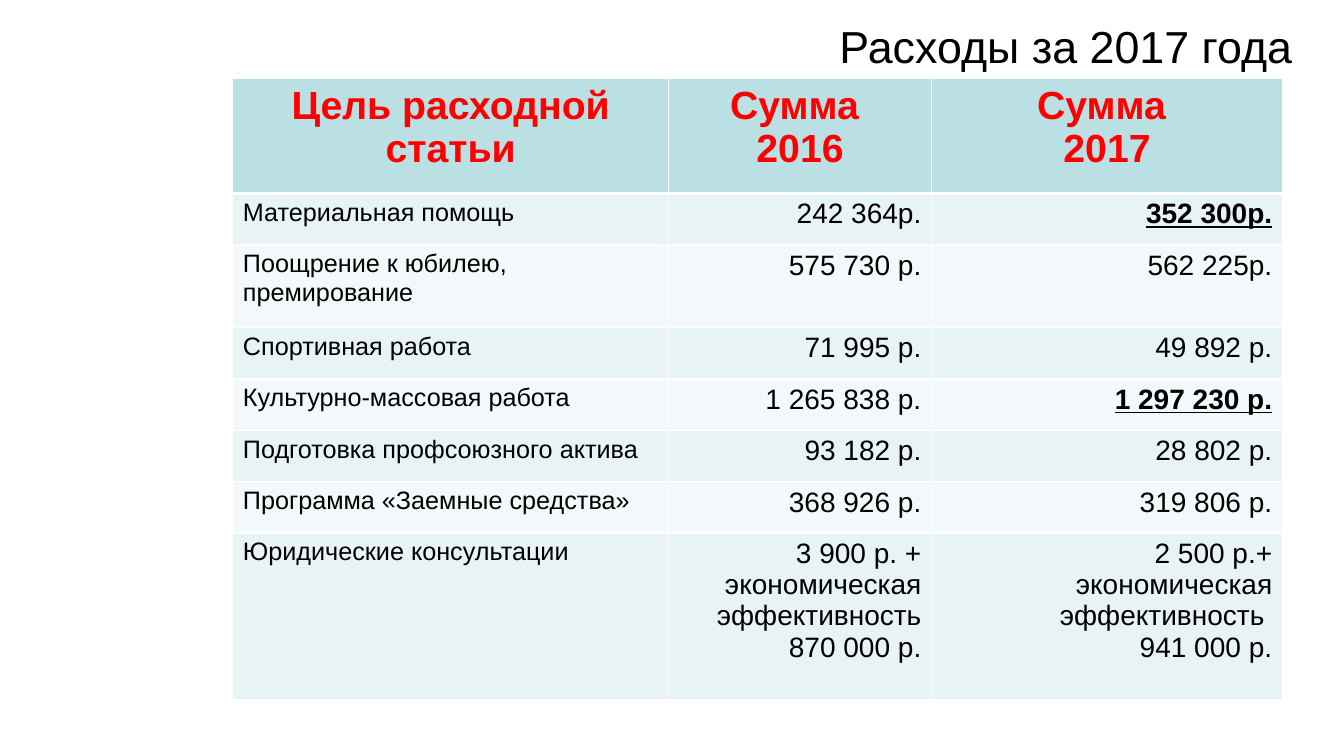
"""Build a slide with a table comparing expenses in 2016 and 2017."""
from lxml import etree
from pptx import Presentation, util as u
from pptx.dml.color import RGBColor
from pptx.enum import text
from pptx.oxml import ns

LEFT, CENTER, RIGHT = text.PP_ALIGN.LEFT, text.PP_ALIGN.CENTER, text.PP_ALIGN.RIGHT


def write(tf, content, size=20, color="000000", bold=False, underline=False, align=RIGHT):
    tf.word_wrap = True
    for i, line in enumerate(content.split("\n")):
        p = tf.add_paragraph() if i else tf.paragraphs[0]
        p.alignment = align
        r = p.add_run()
        r.text = line
        r.font.name = "Arial"
        r.font.size = u.Pt(size)
        r.font.bold = bold
        r.font.underline = underline
        r.font.color.rgb = RGBColor.from_string(color)


def border(cell, side, width):
    ln = etree.SubElement(cell._tc.get_or_add_tcPr(), ns.qn(f"a:ln{side}"), w=str(u.Pt(width)))
    fill = etree.SubElement(ln, ns.qn("a:solidFill"))
    etree.SubElement(fill, ns.qn("a:srgbClr"), val="FFFFFF")


prs = Presentation()
prs.slide_width, prs.slide_height = u.Inches(13.33), u.Inches(7.5)
s = prs.slides.add_slide(prs.slide_layouts[6])

rows = [
    ("Цель расходной статьи", "Сумма \n2016", "Сумма \n2017"),
    ("Материальная помощь", "242 364р.", "352 300р."),
    ("Поощрение к юбилею, премирование", "575 730 р.", "562 225р."),
    ("Спортивная работа", "71 995 р.", "49 892 р."),
    ("Культурно-массовая работа", "1 265 838 р.", "1 297 230 р."),
    ("Подготовка профсоюзного актива", "93 182 р.", "28 802 р."),
    ("Программа «Заемные средства»", "368 926 р.", "319 806 р."),
    ("Юридические консультации", "3 900 р. + экономическая эффективность 870 000 р.",
     "2 500 р.+\nэкономическая эффективность \n941 000 р."),
]
widths = [4.32, 2.61, 3.48]
heights = [1.14, 0.51, 0.82, 0.51, 0.51, 0.51, 0.51, 1.65]
emphasized = {"352 300р.", "1 297 230 р."}

table = s.shapes.add_table(len(rows), len(widths), u.Inches(2.31), u.Inches(0.78),
                           u.Inches(sum(widths)), u.Inches(sum(heights))).table
for column, width in zip(table.columns, widths):
    column.width = u.Inches(width)

for i, (row, height) in enumerate(zip(rows, heights)):
    table.rows[i].height = u.Inches(height)
    for j, content in enumerate(row):
        cell = table.cell(i, j)
        for side in "LRTB":
            border(cell, side, 3 if (i, side) in [(0, "B"), (1, "T")] else 1)
        cell.fill.solid()
        color = "BBE0E3" if i == 0 else ("F3F9FA", "E7F3F4")[i % 2]
        cell.fill.fore_color.rgb = RGBColor.from_string(color)
        if i == 0:
            write(cell.text_frame, content, size=28, color="FF0000", bold=True, align=CENTER)
        elif j == 0:
            write(cell.text_frame, content, size=18, align=LEFT)
        else:
            strong = content in emphasized
            write(cell.text_frame, content, bold=strong, underline=strong)

title = s.shapes.add_textbox(u.Inches(2.48), u.Inches(0.14), u.Inches(10.44), u.Inches(0.64))
write(title.text_frame, "Расходы за 2017 года", size=32)

prs.save("out.pptx")
